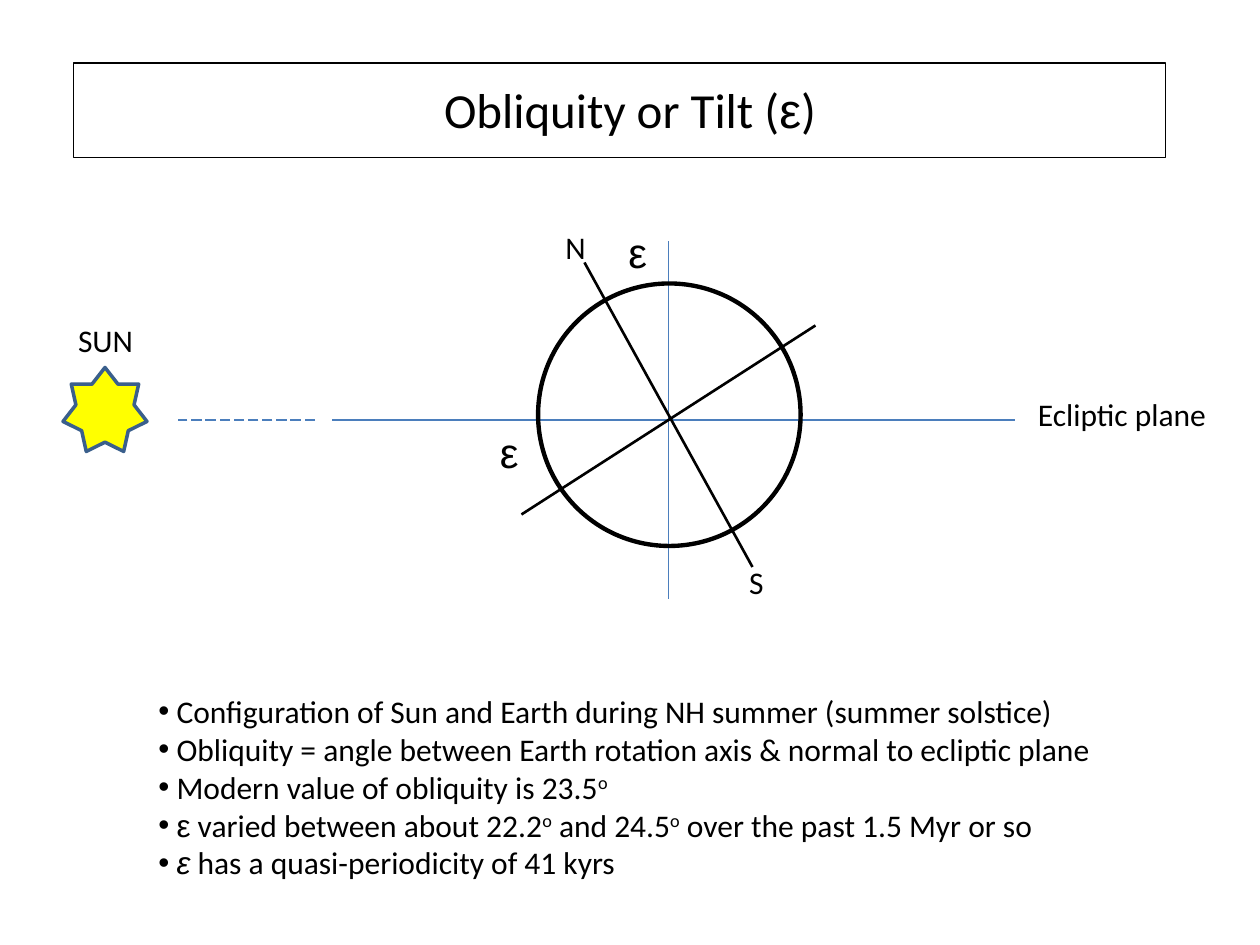
from lxml.etree import SubElement
from pptx import Presentation
from pptx.dml.color import RGBColor
from pptx.enum.dml import MSO_LINE
from pptx.enum.shapes import MSO_CONNECTOR, MSO_SHAPE
from pptx.enum.text import MSO_ANCHOR, MSO_AUTO_SIZE, PP_ALIGN
from pptx.oxml.ns import qn
from pptx.util import Pt

BLACK = RGBColor(0x00, 0x00, 0x00)
PLANE_BLUE = RGBColor(0x4B, 0x7E, 0xBC)
SUN_YELLOW = RGBColor(0xFF, 0xFF, 0x00)
SUN_EDGE = RGBColor(0x3A, 0x5F, 0x8C)

GREEK = {"name": "Arial"}
GREEK_ITALIC = {"name": "Arial", "italic": True}
DEGREE = ("o", {"superscript": True})

TITLE = [("Obliquity or Tilt (", {}), ("ε", GREEK), (")", {})]
FACTS = [
    [(" Configuration of Sun and Earth during NH summer (summer solstice)", {})],
    [(" Obliquity = angle between Earth rotation axis & normal to ecliptic plane", {})],
    [(" Modern value of obliquity is 23.5", {}), DEGREE],
    [(" ", {}), ("ε", GREEK), (" varied between about 22.2", {}), DEGREE,
     (" and 24.5", {}), DEGREE, (" over the past 1.5 Myr or so", {})],
    [(" ", {}), ("ε", GREEK_ITALIC), (" has a quasi-periodicity of 41 kyrs", {})],
]
LABELS = [
    ("Ecliptic plane", (586, 222, 116, 29), 18, {}),
    ("ε", (352, 126, 25, 36), 24, GREEK),
    ("ε", (278.6, 240, 25, 36), 24, GREEK),
    ("N", (316, 127, 26, 29), 18, {}),
    ("S", (421, 318, 23, 29), 18, {}),
    ("SUN", (37.5, 180, 46, 29), 18, {}),
]


def set_attributes(target, values):
    for name, value in values.items():
        setattr(target, name, value)


def place(shape, box):
    names = ("left", "top", "width", "height")
    set_attributes(shape, {name: Pt(value) for name, value in zip(names, box)})


def write_runs(paragraph, runs, size):
    for text, style in runs:
        run = paragraph.add_run()
        run.text = text
        values = {"name": "Calibri", "size": Pt(size), **style}
        if values.pop("superscript", False):
            run._r.get_or_add_rPr().set("baseline", "30000")
        set_attributes(run.font, values)
        run.font.color.rgb = BLACK


def add_title(slide):
    title = slide.shapes.title
    place(title, (245.5, 42, 229, 41))
    set_attributes(title.text_frame, {
        "word_wrap": False,
        "auto_size": MSO_AUTO_SIZE.NONE,
        "vertical_anchor": MSO_ANCHOR.MIDDLE,
    })
    paragraph = title.text_frame.paragraphs[0]
    paragraph.alignment = PP_ALIGN.CENTER
    write_runs(paragraph, TITLE, 28)


def add_text(slide, box, paragraphs, size, bulleted=False):
    frame = slide.shapes.add_textbox(*map(Pt, box)).text_frame
    set_attributes(frame, {"word_wrap": False, "auto_size": MSO_AUTO_SIZE.SHAPE_TO_FIT_TEXT})
    for index, runs in enumerate(paragraphs):
        paragraph = frame.add_paragraph() if index else frame.paragraphs[0]
        if bulleted:
            properties = paragraph._p.get_or_add_pPr()
            SubElement(properties, qn("a:buFont")).set("typeface", "Arial")
            SubElement(properties, qn("a:buChar")).set("char", "•")
        write_runs(paragraph, runs, size)


def add_outline(slide, preset, box, color, width, fill=None):
    shape = slide.shapes.add_shape(preset, *map(Pt, box))
    shape.shadow.inherit = False
    if fill is None:
        shape.fill.background()
    else:
        shape.fill.solid()
        shape.fill.fore_color.rgb = fill
    shape.line.color.rgb = color
    shape.line.width = Pt(width)


def add_line(slide, ends, color, width, dash=None):
    connector = slide.shapes.add_connector(MSO_CONNECTOR.STRAIGHT, *map(Pt, ends))
    connector.line.color.rgb = color
    set_attributes(connector.line, {"width": Pt(width), "dash_style": dash})
    SubElement(connector._element.spPr, qn("a:effectLst"))


def main():
    presentation = Presentation()
    set_attributes(presentation, {"slide_width": Pt(720), "slide_height": Pt(540)})
    slide = presentation.slides.add_slide(presentation.slide_layouts[5])
    add_title(slide)
    add_outline(slide, MSO_SHAPE.RECTANGLE, (42, 36, 624, 54), BLACK, 1)
    add_line(slide, (382, 342, 382, 138), PLANE_BLUE, 0.75)
    add_line(slide, (190, 240, 580, 240), PLANE_BLUE, 0.75)
    add_line(slide, (180, 240, 102, 240), PLANE_BLUE, 0.75, MSO_LINE.LONG_DASH)
    add_outline(slide, MSO_SHAPE.OVAL, (307.5, 162, 150, 150), BLACK, 2.5)
    add_line(slide, (334, 150, 430, 324), BLACK, 1.5)
    add_line(slide, (466, 186, 298, 294), BLACK, 1.5)
    add_outline(slide, MSO_SHAPE.STAR_7_POINT, (36, 210, 48, 48), SUN_EDGE, 2, SUN_YELLOW)
    for text, box, size, style in LABELS:
        add_text(slide, box, [[(text, style)]], size)
    add_text(slide, (83.5, 392, 554, 117), FACTS, 18, bulleted=True)
    presentation.save("out.pptx")


if __name__ == "__main__":
    main()
